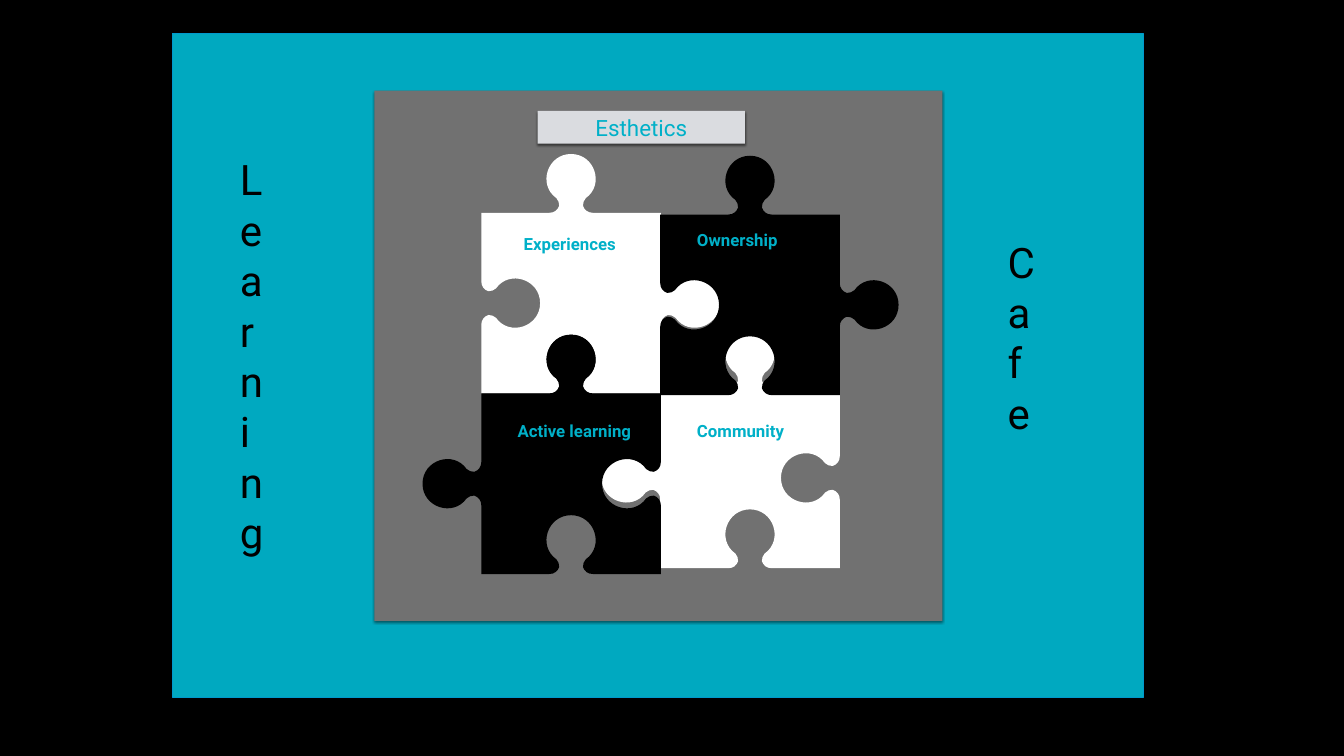
from lxml.etree import SubElement
from pptx import Presentation
from pptx.dml.color import RGBColor
from pptx.enum.shapes import MSO_SHAPE as Shape
from pptx.enum.text import MSO_ANCHOR as Anchor, MSO_AUTO_SIZE as AutoSize, PP_ALIGN as Align
from pptx.oxml.ns import qn
from pptx.util import Pt

BLACK = RGBColor(0x00, 0x00, 0x00)
WHITE = RGBColor(0xFF, 0xFF, 0xFF)
TEAL = RGBColor(0x00, 0xB0, 0xC8)
BLUE = RGBColor(0x00, 0x99, 0xCC)
GREY = RGBColor(0x71, 0x71, 0x71)
SILVER = RGBColor(0xDA, 0xDC, 0xE0)
FONT = "Roboto"
INSET = 4.32

PIECE_WIDTH, PIECE_HEIGHT = 256.5, 258
LEFT_COLUMN, RIGHT_COLUMN = 687.6, 943.2
KNOB, SOCKET = 1, -1

NECK_START = [(31, 0)]
NECK_CURVES = [(24, 0), (19, 4), (17, 10), (17, 14), (18, 18), (21, 21)]
HEAD_CURVE = [(48, 40), (34, 84)]
TIP = [(0, 84)]
HALF_TAB = NECK_START + NECK_CURVES + HEAD_CURVE
TAB = [(-along, out) for along, out in HALF_TAB] + TIP + HALF_TAB[::-1]


def paint(shape, color):
    shape.fill.solid()
    shape.fill.fore_color.rgb = color


def add_shadow(shape):
    shape.shadow.inherit = False
    effects = shape._element.spPr.find(qn("a:effectLst"))
    shadow = SubElement(effects, qn("a:outerShdw"), blurRad=str(Pt(3)), dist=str(Pt(2)),
                        dir="5400000", algn="ctr", rotWithShape="0")
    color = SubElement(shadow, qn("a:srgbClr"), val=str(BLACK))
    SubElement(color, qn("a:alpha"), val="50000")


def add_panel(page, bounds, color):
    panel = page.shapes.add_shape(Shape.RECTANGLE, *map(Pt, bounds))
    paint(panel, color)
    panel.line.fill.background()
    add_shadow(panel)
    return panel


def trace_edge(start, end, tab):
    (x1, y1), (x2, y2) = start, end
    length = abs(x2 - x1) + abs(y2 - y1)
    step_x, step_y = (x2 - x1) / length, (y2 - y1) / length
    middle_x, middle_y = (x1 + x2) / 2, (y1 + y2) / 2
    points = [(middle_x + along * step_x + tab * out * step_y,
               middle_y + along * step_y - tab * out * step_x) for along, out in TAB]
    return points + [end]


def merge_curve(lines):
    curve = lines[0].makeelement(qn("a:cubicBezTo"))
    lines[0].addprevious(curve)
    for line in lines:
        curve.append(line[0])
        line.getparent().remove(line)


def add_piece(group, left, top, tabs, color):
    right, bottom = left + PIECE_WIDTH, top + PIECE_HEIGHT
    corners = [(left, top), (right, top), (right, bottom), (left, bottom)]
    outline = []
    for start, end, tab in zip(corners, corners[1:] + corners[:1], tabs):
        outline += trace_edge(start, end, tab)

    builder = group.shapes.build_freeform(Pt(left), Pt(top))
    builder.add_line_segments([(Pt(x), Pt(y)) for x, y in outline], close=True)
    piece = builder.convert_to_shape()
    lines = list(piece._element.iter(qn("a:lnTo")))
    edge_size = len(TAB) + 1
    for edge in range(0, len(outline), edge_size):
        for first in range(edge + 1, edge + len(TAB), 3):
            merge_curve(lines[first:first + 3])
    paint(piece, color)
    piece.line.fill.background()
    piece.shadow.inherit = False


def write(box, words, size, color, align=Align.LEFT, bold=False):
    frame = box.text_frame
    frame.auto_size = AutoSize.NONE
    frame.word_wrap = True
    frame.vertical_anchor = Anchor.MIDDLE
    frame.margin_left = frame.margin_right = Pt(INSET)
    frame.margin_top = frame.margin_bottom = Pt(INSET)
    para = frame.paragraphs[0]
    para.alignment = align
    span = para.add_run()
    span.text = words
    span.font.name = FONT
    span.font.size = Pt(size)
    span.font.bold = bold
    span.font.color.rgb = color


def add_text(parent, bounds, words, size, color, align=Align.LEFT, bold=False):
    box = parent.shapes.add_textbox(*map(Pt, bounds))
    write(box, words, size, color, align, bold)


def place_title(page, bounds, words):
    title = page.shapes.title
    page.shapes._spTree.append(title._element)
    title.left, title.top, title.width, title.height = map(Pt, bounds)
    paint(title, SILVER)
    add_shadow(title)
    write(title, words, 32, TEAL, Align.CENTER)


def add_puzzle(page):
    group = page.shapes.add_group_shape()
    for left, top, color, top_tab, right_tab, bottom_tab, left_tab in (
        (LEFT_COLUMN, 304, WHITE, KNOB, KNOB, SOCKET, SOCKET),
        (RIGHT_COLUMN, 553.7, WHITE, KNOB, SOCKET, SOCKET, KNOB),
        (RIGHT_COLUMN, 306.5, BLACK, KNOB, KNOB, SOCKET, SOCKET),
        (LEFT_COLUMN, 562, BLACK, KNOB, SOCKET, SOCKET, KNOB),
    ):
        add_piece(group, left, top, (top_tab, right_tab, bottom_tab, left_tab), color)
    for words, left, top, width, align in (
        ("Ownership", 991.4, 324.5, 329.8, Align.LEFT),
        ("Community", 991.4, 596.9, 329.8, Align.LEFT),
        ("Experiences", 429.8, 329.8, 454.3, Align.RIGHT),
        ("Active learning", 576, 596.9, 329.8, Align.RIGHT),
    ):
        add_text(group, (left, top, width, 37.4), words, 24, TEAL, align, True)


def main():
    deck = Presentation()
    deck.slide_width, deck.slide_height = Pt(1920), Pt(1080)
    page = deck.slides.add_slide(deck.slide_layouts[5])
    paint(page.background, BLACK)

    backdrop = add_panel(page, (246.8, 48, 1386, 948), TEAL)
    color = backdrop._element.spPr.find(qn("a:solidFill"))[0]
    SubElement(color, qn("a:alpha"), val="96000")
    backdrop.line.color.rgb = BLUE
    backdrop.line.width = Pt(1)

    add_panel(page, (535, 129.6, 811.4, 757.4), GREY)
    place_title(page, (768.2, 158.4, 296, 46.8), "Esthetics")
    add_puzzle(page)
    add_text(page, (338.4, 213.1, 25.9, 589.7), "Learning", 60, BLACK)
    add_text(page, (1435, 331.9, 42.5, 298.8), "Cafe", 60, BLACK)
    deck.save("out.pptx")


if __name__ == "__main__":
    main()
